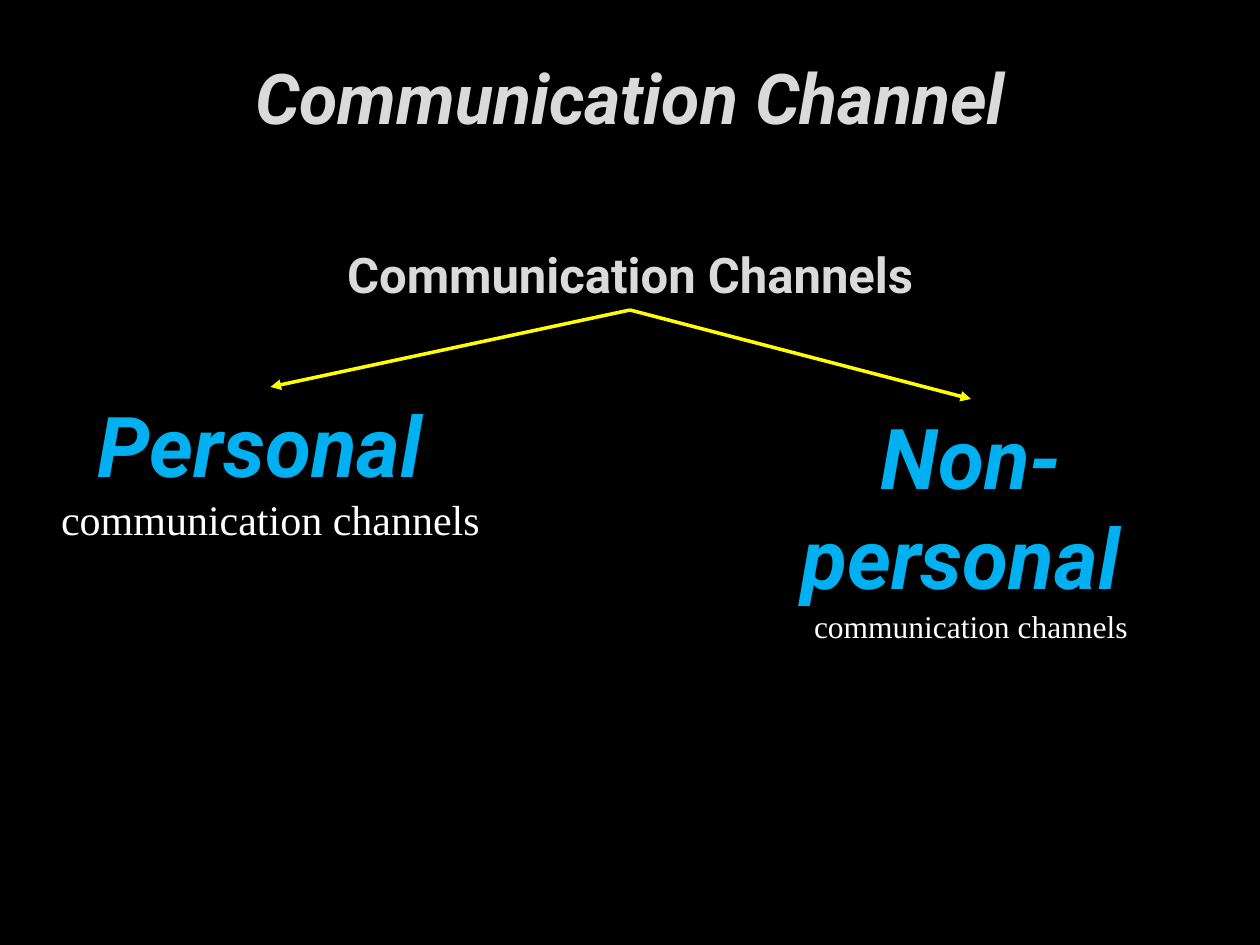
from lxml import etree
from pptx import Presentation
from pptx import util as u
from pptx.dml.color import RGBColor
from pptx.enum import shapes, text
from pptx.oxml import ns

SCALE = 914400 / 126
BLACK = RGBColor(0x00, 0x00, 0x00)
WHITE = RGBColor(0xFF, 0xFF, 0xFF)
GREY = RGBColor(0xDA, 0xDA, 0xDA)
BLUE = RGBColor(0x00, 0xB0, 0xF0)
YELLOW = RGBColor(0xFF, 0xFF, 0x00)
SANS = "Roboto"
SERIF = "Times New Roman"
BOTTOM, TOP = 2, 0


def px(length):
    return u.Emu(round(length * SCALE))


def style(font, name, size, color, bold=False, italic=False):
    font.name = name
    font.size = u.Pt(size)
    font.bold = bold
    font.italic = italic
    font.color.rgb = color


def fill_placeholder(shape, box, words, size, italic):
    shape.left, shape.top, shape.width, shape.height = map(px, box)
    frame = shape.text_frame
    frame.auto_size = text.MSO_AUTO_SIZE.NONE
    frame.text = words
    paragraph = frame.paragraphs[0]
    paragraph.alignment = text.PP_ALIGN.CENTER
    style(paragraph.font, SANS, size, GREY, bold=True, italic=italic)
    return paragraph


def remove_bullet(paragraph):
    properties = paragraph._p.get_or_add_pPr()
    properties.set("marL", "0")
    properties.set("indent", "0")
    bullet = etree.Element(ns.qn("a:buNone"))
    properties.insert_element_before(bullet, "a:tabLst", "a:defRPr", "a:extLst")


def add_channel(slide, box, heading, caption_size):
    shape = slide.shapes.add_textbox(*map(px, box))
    frame = shape.text_frame
    frame.word_wrap = True
    frame.auto_size = text.MSO_AUTO_SIZE.SHAPE_TO_FIT_TEXT
    frame.text = f"{heading}\ncommunication channels"
    title, caption = frame.paragraphs
    for paragraph in (title, caption):
        paragraph.alignment = text.PP_ALIGN.CENTER
    style(title.font, SANS, 48, BLUE, bold=True, italic=True)
    style(caption.font, SERIF, caption_size, WHITE)
    return shape


def add_arrow(slide, source, target):
    arrow = slide.shapes.add_connector(shapes.MSO_CONNECTOR.STRAIGHT, 0, 0, 0, 0)
    arrow.begin_connect(source, BOTTOM)
    arrow.end_connect(target, TOP)
    arrow.line.color.rgb = YELLOW
    arrow.line.width = u.Pt(2)
    etree.SubElement(arrow.line._get_or_add_ln(), ns.qn("a:tailEnd"), type="triangle")
    etree.SubElement(arrow._element.spPr, ns.qn("a:effectLst"))


def main():
    presentation = Presentation()
    presentation.slide_width, presentation.slide_height = px(1260), px(945)
    slide = presentation.slides.add_slide(presentation.slide_layouts[1])
    slide.background.fill.solid()
    slide.background.fill.fore_color.rgb = BLACK

    fill_placeholder(slide.shapes.title, (95, 29, 1070, 134),
                     "Communication Channel", 40, True)
    body = slide.placeholders[1]
    paragraph = fill_placeholder(body, (95, 238, 1070, 72),
                                 "Communication Channels", 28, False)
    paragraph.space_after = u.Pt(6)
    remove_bullet(paragraph)

    channels = [
        add_channel(slide, (47, 387, 447, 165), "Personal ", 24),
        add_channel(slide, (728, 399, 486, 152), "Non-personal ", 18),
    ]
    for channel in channels:
        add_arrow(slide, body, channel)

    presentation.save("out.pptx")


if __name__ == "__main__":
    main()
